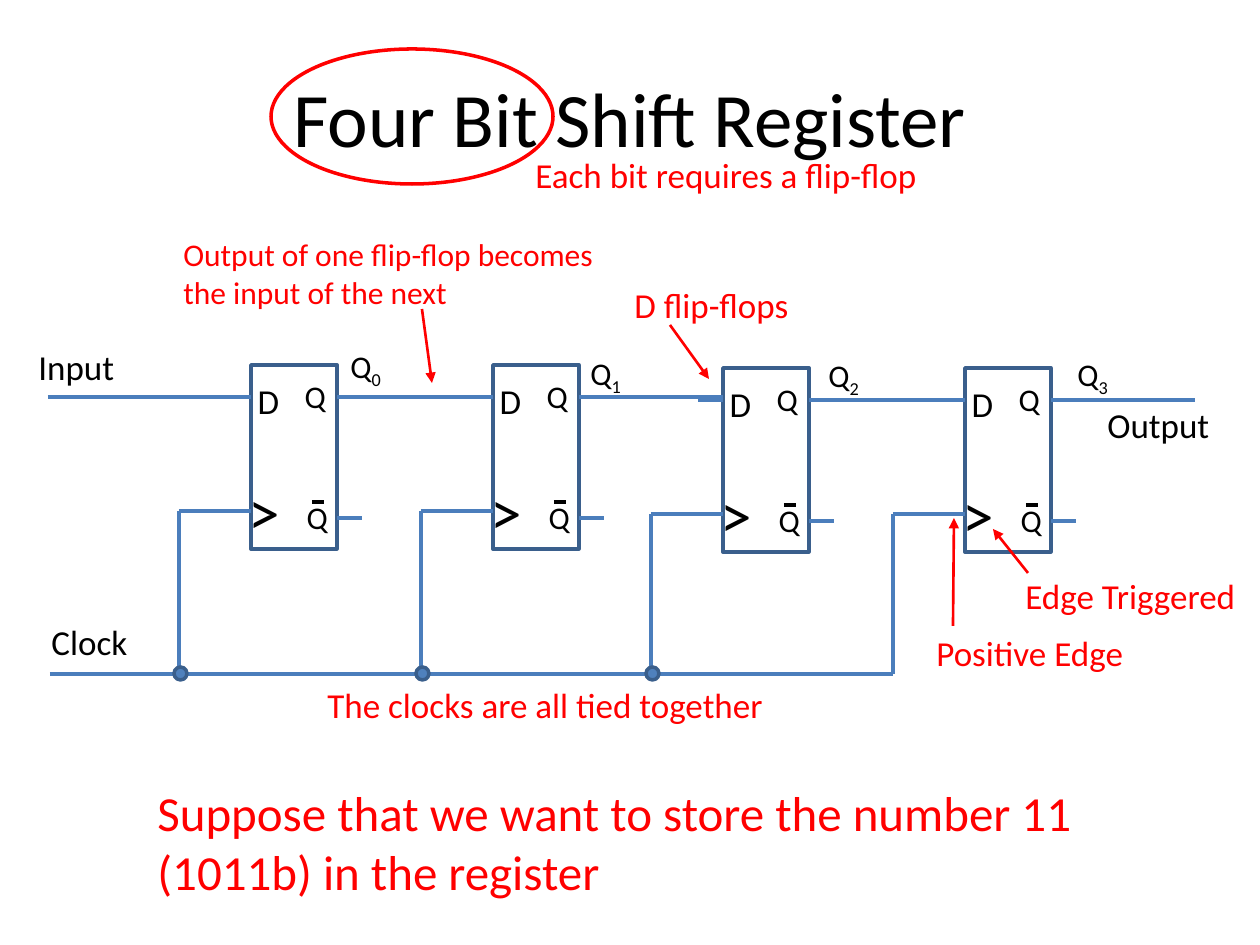
"""Build the four bit shift register slide."""
import pptx
import pptx.dml.color
import pptx.enum.shapes
import pptx.enum.text
import pptx.oxml.ns
import pptx.util
from lxml import etree

SHAPE = pptx.enum.shapes.MSO_SHAPE
THEME = {
    "font": "Calibri", "ink": "000000", "note": "FF0000", "paper": "FFFFFF",
    "wire": "4B7EBC", "edge": "3A5F8C", "dot": "4F81BD",
    "title": 44, "closing": 28, "label": 20, "small": 18, "clock_mark": 36,
    "wire_pt": 2.5, "edge_pt": 2, "arrow_pt": 1.5,
}

TITLE = "Four Bit Shift Register"
FLIP_FLOPS = [(251, 365), (493, 365), (723, 368), (965, 368)]
FF_W, FF_H = 86, 184
D_Y, CLOCK_Y, QBAR_Y = 32, 146, 153
PINS = [
    ("D", -4, 8, 23, 55, "label"),
    (">", -15, 101, 42, 53, "clock_mark"),
    ("Q", 43, 6, 23, 50, "small"),
    ("Q", 45, 127, 23, 50, "small"),
]
STUB = 25
RISER_GAP = 72
BUS_LEFT, BUS_Y = 50, 674
INPUT_LEFT, OUTPUT_RIGHT = 48, 1195
DOT = 13
LABELS = [
    ("Clock", 39, 614, 107, 55),
    ("Input", 26, 339, 107, 55),
    ("Output", 1095, 397, 137, 55),
]
OUTPUTS = [("0", 338, 341), ("1", 578, 348), ("2", 816, 350), ("3", 1065, 349)]
NOTES = [
    ("D flip-flops", 622, 277, 207, 55, "label"),
    ("Output of one flip-flop becomes the input of the next",
     171, 229, 438, 89, "small"),
    ("Each bit requires a flip-flop", 523, 147, 455, 55, "label"),
    ("Suppose that we want to store the number 11 (1011b) in the register",
     145, 776, 1086, 131, "closing"),
    ("The clocks are all tied together", 315, 677, 466, 55, "label"),
    ("Edge Triggered", 1013, 568, 253, 55, "label"),
    ("Positive Edge", 924, 625, 253, 55, "label"),
]
ARROWS = [
    (670, 325, 709, 379), (422, 309, 432, 383),
    (1028, 573, 993, 529), (953, 626, 954, 518),
]
CIRCLE = (271, 49, 282, 135)


def px(n):
    return pptx.util.Emu(round(n * 914400 / 126))


def rgb(name):
    return pptx.dml.color.RGBColor.from_string(THEME[name])


def add_run(p, text, size, color="ink"):
    r = p.add_run()
    r.text = text
    r.font.name = THEME["font"]
    r.font.size = pptx.util.Pt(THEME[size])
    r.font.color.rgb = rgb(color)
    return r


def add_text(s, text, x, y, w, h, size="label", color="ink", sub=None):
    tf = s.shapes.add_textbox(px(x), px(y), px(w), px(h)).text_frame
    tf.word_wrap = True
    tf.auto_size = pptx.enum.text.MSO_AUTO_SIZE.SHAPE_TO_FIT_TEXT
    p = tf.paragraphs[0]
    add_run(p, text, size, color)
    if sub:
        r = add_run(p, sub, size, color)
        r.font._element.set("baseline", "-25000")


def add_line(s, x1, y1, x2, y2, color="wire", width="wire_pt", arrow=False):
    c = s.shapes.add_connector(pptx.enum.shapes.MSO_CONNECTOR.STRAIGHT,
                               px(x1), px(y1), px(x2), px(y2))
    c.line.color.rgb = rgb(color)
    c.line.width = pptx.util.Pt(THEME[width])
    if arrow:
        ln = c.line._get_or_add_ln()
        etree.SubElement(ln, pptx.oxml.ns.qn("a:tailEnd"), type="triangle")
    etree.SubElement(c._element.spPr, pptx.oxml.ns.qn("a:effectLst"))


def add_outline(s, kind, x, y, w, h, line, fill=None):
    sp = s.shapes.add_shape(kind, px(x), px(y), px(w), px(h))
    sp.shadow.inherit = False
    if fill:
        sp.fill.solid()
        sp.fill.fore_color.rgb = rgb(fill)
    else:
        sp.fill.background()
    sp.line.color.rgb = rgb(line)
    sp.line.width = pptx.util.Pt(THEME["edge_pt"])


def add_flip_flop(s, x, y):
    add_outline(s, SHAPE.RECTANGLE, x, y, FF_W, FF_H, "edge", "paper")
    for text, dx, dy, w, h, size in PINS:
        add_text(s, text, x + dx, y + dy, w, h, size)
    add_line(s, x + 61, y + 137, x + 73, y + 137, "ink", "edge_pt")
    right = x + FF_W
    add_line(s, x - STUB, y + D_Y, x, y + D_Y)
    add_line(s, right, y + QBAR_Y, right + STUB, y + QBAR_Y)


def add_wiring(s):
    starts = [(INPUT_LEFT, FLIP_FLOPS[0][1])]
    starts += [(x + FF_W, y) for x, y in FLIP_FLOPS]
    ends = [x for x, y in FLIP_FLOPS] + [OUTPUT_RIGHT]
    for (x, y), end in zip(starts, ends):
        add_line(s, x, y + D_Y, end, y + D_Y)
    add_line(s, BUS_LEFT, BUS_Y, FLIP_FLOPS[-1][0] - RISER_GAP, BUS_Y)
    for x, y in FLIP_FLOPS:
        riser = x - RISER_GAP
        add_line(s, riser, BUS_Y, riser, y + CLOCK_Y)
        add_line(s, riser, y + CLOCK_Y, x, y + CLOCK_Y)
    for x, y in FLIP_FLOPS[:-1]:
        add_outline(s, SHAPE.OVAL, x - RISER_GAP - DOT // 2 + 1,
                    BUS_Y - DOT // 2 - 1, DOT, DOT, "edge", "dot")


def main():
    prs = pptx.Presentation()
    prs.slide_width, prs.slide_height = px(1260), px(945)
    s = prs.slides.add_slide(prs.slide_layouts[5])
    title = s.shapes.title
    title.left, title.top, title.width, title.height = map(px, (63, 38, 1134, 157))
    title.text_frame.vertical_anchor = pptx.enum.text.MSO_ANCHOR.MIDDLE
    p = title.text_frame.paragraphs[0]
    p.alignment = pptx.enum.text.PP_ALIGN.CENTER
    add_run(p, TITLE, "title")

    for x, y in FLIP_FLOPS:
        add_flip_flop(s, x, y)
    add_wiring(s)
    for label in LABELS:
        add_text(s, *label)
    for digit, x, y in OUTPUTS:
        add_text(s, "Q", x, y, 59, 50, "small", sub=digit)
    for note in NOTES:
        add_text(s, *note, color="note")
    for arrow in ARROWS:
        add_line(s, *arrow, "note", "arrow_pt", arrow=True)
    add_outline(s, SHAPE.OVAL, *CIRCLE, "note")
    prs.save("out.pptx")


if __name__ == "__main__":
    main()
